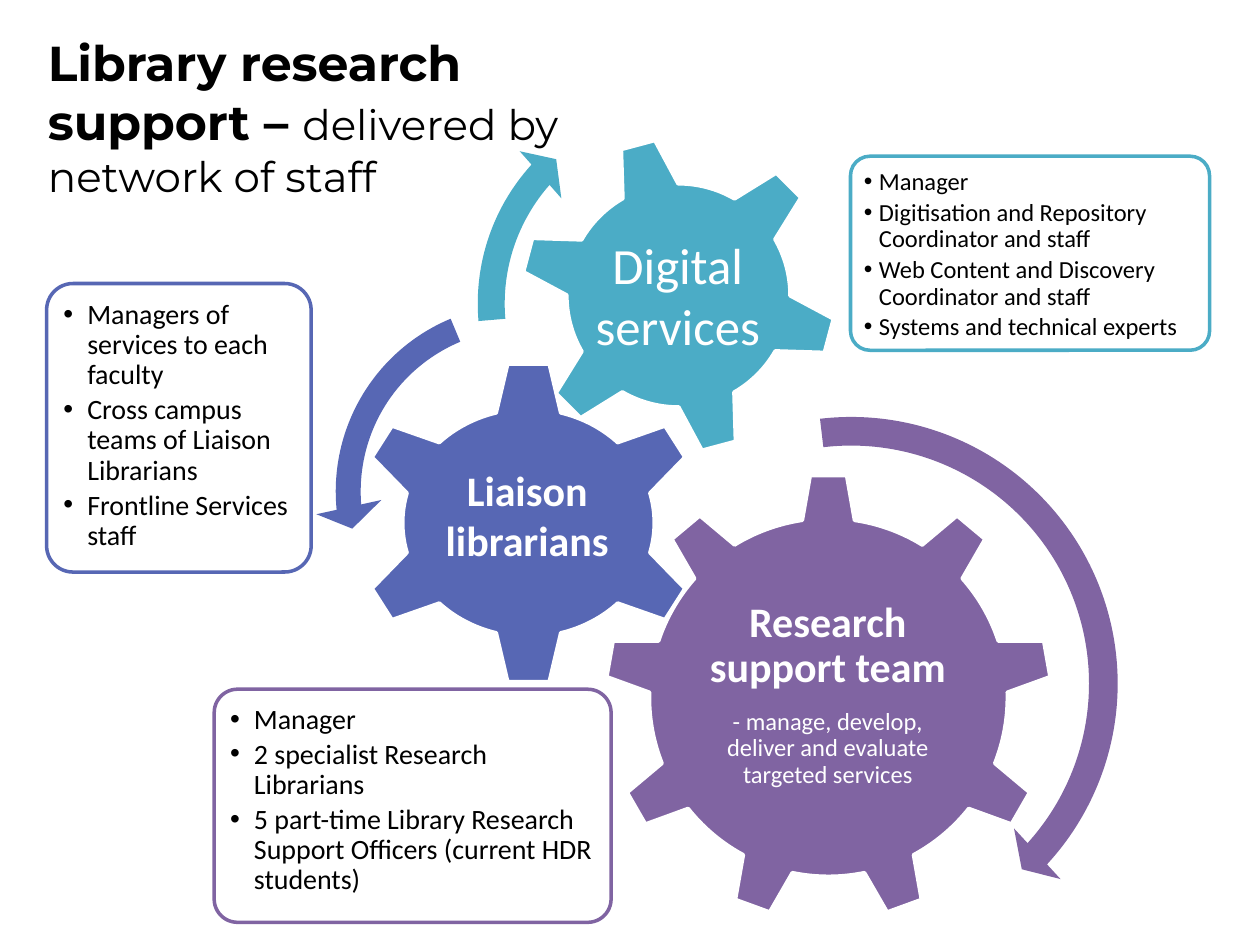
"""Build the slide on the network of library research support staff."""
from dataclasses import dataclass

import pptx
import pptx.dml.color
import pptx.enum.shapes
import pptx.enum.text
import pptx.oxml
import pptx.oxml.ns
import pptx.util

MSO = pptx.enum.shapes.MSO_SHAPE
ALIGN = pptx.enum.text.PP_ALIGN
ANCHOR = pptx.enum.text.MSO_ANCHOR
COLS, ROWS = 100, 75


@dataclass(frozen=True)
class Theme:
    purple: str = "8064A2"
    blue: str = "5767B4"
    teal: str = "4BACC6"
    white: str = "FFFFFF"
    black: str = "000000"
    heading: str = "Montserrat"
    body: str = "Calibri"
    title: int = 28
    subtitle: int = 24
    large: int = 29
    label: int = 24
    item: int = 16
    small: int = 14
    outline: int = 2


T = Theme()


@dataclass(frozen=True)
class Box:
    col: float
    row: float
    cols: float
    rows: float

    def inset(self, pad: float) -> "Box":
        return Box(self.col + pad, self.row + pad, self.cols - 2 * pad, self.rows - 2 * pad)


@dataclass(frozen=True)
class Line:
    text: str
    size: int
    bold: bool = False
    spacing: float = 1.0
    after: float = 0


@dataclass(frozen=True)
class Gear:
    kind: MSO
    box: Box
    color: str
    label: Box
    lines: tuple[Line, ...]
    rotation: float = 0
    bottom: float = 0.03


@dataclass(frozen=True)
class Card:
    box: Box
    color: str
    size: int
    hang: float
    margin: float
    items: tuple[str, ...]


@dataclass(frozen=True)
class Arrow:
    kind: MSO
    box: Box
    color: str
    adjustments: tuple[float, ...]


GEARS = (
    Gear(MSO.GEAR_9, Box(48, 37.6, 35.5, 35.5), T.purple, Box(55.1, 46, 21.2, 18.3),
         (Line("Research support team", T.label, True, 0.9, 10),
          Line("- manage, develop, deliver and evaluate targeted services", T.small, False, 0.9, 6))),
    Gear(MSO.GEAR_6, Box(28.1, 28.6, 27.7, 25.8), T.blue, Box(34.8, 35.1, 14.1, 12.7),
         (Line("Liaison librarians", T.label, True),), bottom=0.15),
    Gear(MSO.GEAR_6, Box(41.2, 10.8, 25.3, 25.3), T.teal, Box(46.7, 16.3, 14.2, 14.2),
         (Line("Digital services", T.large),), rotation=345),
)
CARDS = (
    Card(Box(17, 54.7, 31.5, 18.5), T.purple, T.item, 0.19, 0.07,
         ("Manager", "2 specialist Research Librarians",
          "5 part-time Library Research Support Officers (current HDR students)")),
    Card(Box(3.7, 22.5, 21, 22.9), T.blue, T.item, 0.19, 0.07,
         ("Managers of services to each faculty", "Cross campus teams of Liaison Librarians",
          "Frontline Services staff")),
    Card(Box(67.5, 12.4, 28.5, 15.4), T.teal, T.small, 0.12, 0.06,
         ("Manager", "Digitisation and Repository Coordinator and staff",
          "Web Content and Discovery Coordinator and staff", "Systems and technical experts")),
)
ARROWS = (
    Arrow(MSO.CIRCULAR_ARROW, Box(44.8, 31.5, 45.5, 45.5), T.purple, (0.05, 2.99, 25.46, 157.98, 0.06)),
    Arrow(MSO.LEFT_CIRCULAR_ARROW, Box(25, 22.5, 33, 33), T.blue, (0.06, 4.3, 104.89, 148.38, 0.08)),
    Arrow(MSO.CIRCULAR_ARROW, Box(36.5, 6.3, 35.6, 35.6), T.teal, (0.06, 3.94, 133.14, 105.08, 0.07)),
)


def rgb(color: str) -> pptx.dml.color.RGBColor:
    return pptx.dml.color.RGBColor.from_string(color)


def place(prs, box: Box) -> tuple[int, int, int, int]:
    w, h = prs.slide_width / COLS, prs.slide_height / ROWS
    return int(box.col * w), int(box.row * h), int(box.cols * w), int(box.rows * h)


def add_run(p, text: str, *, size: int, font: str = T.body, color: str = T.black, bold: bool = False) -> None:
    r = p.add_run()
    r.text = text
    r.font.name, r.font.size, r.font.bold = font, pptx.util.Pt(size), bold
    r.font.color.rgb = rgb(color)


def add_bullet(p, hang: float) -> None:
    pPr = p._p.get_or_add_pPr()
    indent = pptx.util.Inches(hang)
    pPr.set("marL", str(indent))
    pPr.set("indent", str(-indent))
    ns = pptx.oxml.ns.nsdecls("a")
    pPr.append(pptx.oxml.parse_xml(f'<a:buFont {ns} typeface="Arial"/>'))
    pPr.append(pptx.oxml.parse_xml(f'<a:buChar {ns} char="•"/>'))


def add_text(prs, s, box: Box, lines: tuple[Line, ...], *, color: str = T.black, margin: float = 0.03,
             bottom: float = 0.03, anchor=ANCHOR.TOP, align=ALIGN.LEFT, hang: float = 0) -> None:
    tf = s.shapes.add_textbox(*place(prs, box)).text_frame
    tf.word_wrap, tf.vertical_anchor = True, anchor
    tf.margin_left = tf.margin_right = tf.margin_top = pptx.util.Inches(margin)
    tf.margin_bottom = pptx.util.Inches(bottom)
    for i, line in enumerate(lines):
        p = tf.add_paragraph() if i else tf.paragraphs[0]
        if hang:
            p.level = 1
            add_bullet(p, hang)
        p.alignment, p.line_spacing = align, line.spacing
        p.space_before, p.space_after = pptx.util.Pt(0), pptx.util.Pt(line.after)
        add_run(p, line.text, size=line.size, color=color, bold=line.bold)


def add_shape(prs, s, kind, box: Box, fill: str, *, line: str = "", adjustments=(), rotation: float = 0):
    sp = s.shapes.add_shape(kind, *place(prs, box))
    sp.shadow.inherit = False
    sp.rotation = rotation
    for i, value in enumerate(adjustments):
        sp.adjustments[i] = value
    sp.fill.solid()
    sp.fill.fore_color.rgb = rgb(fill)
    if line:
        sp.line.color.rgb, sp.line.width = rgb(line), pptx.util.Pt(T.outline)
    else:
        sp.line.fill.background()
    return sp


def add_gear(prs, s, gear: Gear) -> None:
    add_shape(prs, s, gear.kind, gear.box, gear.color, line=T.white, rotation=gear.rotation)
    add_text(prs, s, gear.label, gear.lines, color=T.white, bottom=gear.bottom,
             anchor=ANCHOR.MIDDLE, align=ALIGN.CENTER)


def add_card(prs, s, card: Card) -> None:
    sp = add_shape(prs, s, MSO.ROUNDED_RECTANGLE, card.box, T.white, line=card.color, adjustments=(0.1,))
    alpha = pptx.oxml.parse_xml(f'<a:alpha {pptx.oxml.ns.nsdecls("a")} val="90000"/>')
    sp._element.spPr.find(".//" + pptx.oxml.ns.qn("a:srgbClr")).append(alpha)
    pad = 0.03 * min(card.box.cols, card.box.rows)
    lines = tuple(Line(item, card.size, False, 0.9, round(0.17 * card.size, 1)) for item in card.items)
    add_text(prs, s, card.box.inset(pad), lines, margin=card.margin, bottom=card.margin, hang=card.hang)


def add_title(prs, s, box: Box) -> None:
    sp = s.shapes.title
    sp.left, sp.top, sp.width, sp.height = place(prs, box)
    tf = sp.text_frame
    tf.word_wrap, tf.vertical_anchor = True, ANCHOR.TOP
    tf.auto_size = pptx.enum.text.MSO_AUTO_SIZE.SHAPE_TO_FIT_TEXT
    p = tf.paragraphs[0]
    p.alignment = ALIGN.LEFT
    add_run(p, "Library research support – ", size=T.title, font=T.heading, bold=True)
    add_run(p, "delivered by network of staff", size=T.subtitle, font=T.heading)


def main() -> None:
    prs = pptx.Presentation()
    prs.slide_width, prs.slide_height = pptx.util.Inches(10), pptx.util.Inches(7.5)
    s = prs.slides.add_slide(prs.slide_layouts[5])
    add_title(prs, s, Box(2.8, 2.1, 44.9, 14.5))
    for gear, card in zip(GEARS, CARDS):
        add_gear(prs, s, gear)
        add_card(prs, s, card)
    for arrow in ARROWS:
        add_shape(prs, s, arrow.kind, arrow.box, arrow.color, adjustments=arrow.adjustments)
    prs.save("out.pptx")


if __name__ == "__main__":
    main()
